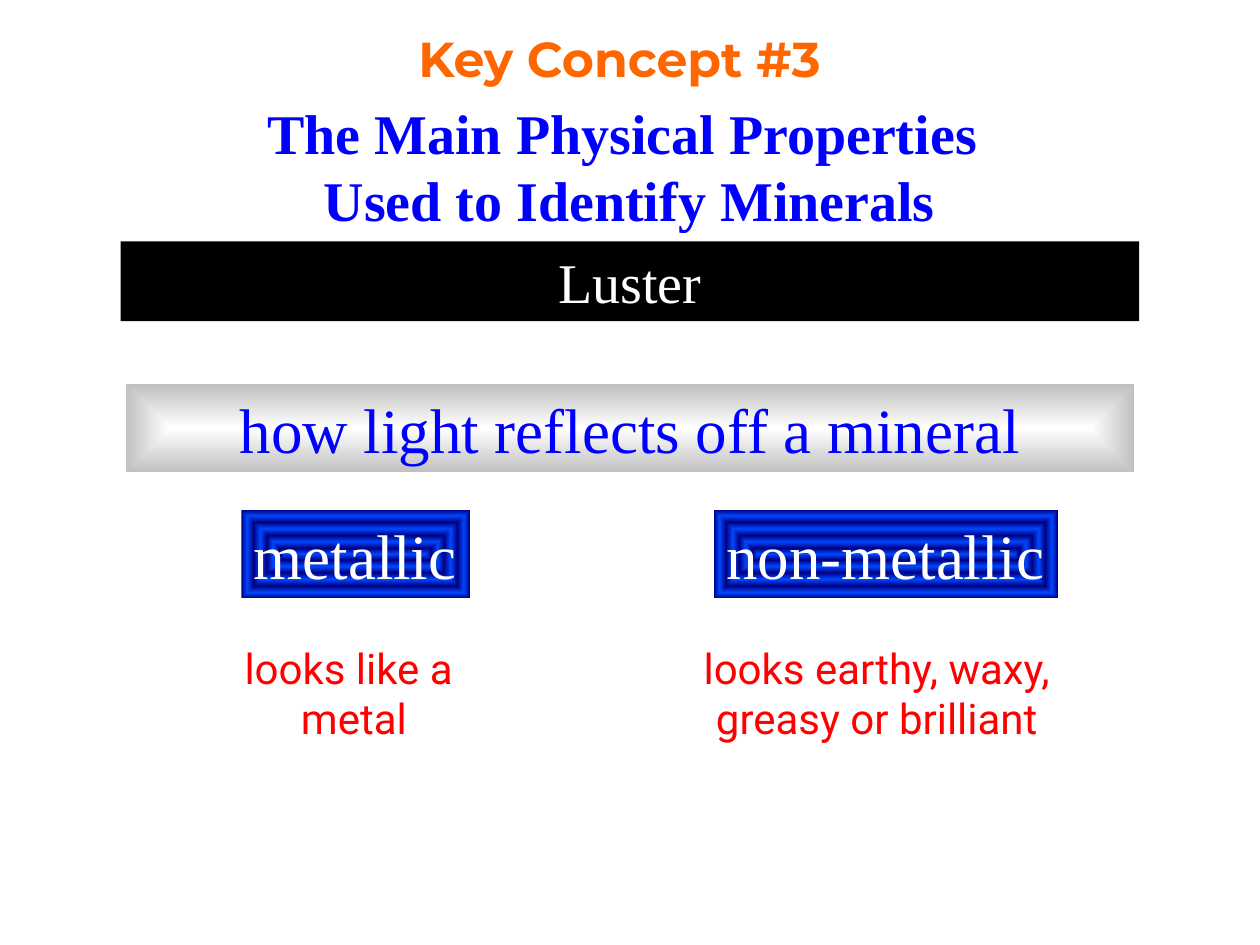
"""Build the slide on luster as a way to identify minerals."""
from lxml import etree
from pptx import Presentation
from pptx.dml.color import RGBColor
from pptx.enum.shapes import MSO_SHAPE
from pptx.enum.text import MSO_ANCHOR, MSO_AUTO_SIZE, PP_ALIGN
from pptx.oxml.ns import qn
from pptx.util import Pt

RECT = MSO_SHAPE.RECTANGLE
TOP, MIDDLE = MSO_ANCHOR.TOP, MSO_ANCHOR.MIDDLE
GROW, FIXED = MSO_AUTO_SIZE.SHAPE_TO_FIT_TEXT, MSO_AUTO_SIZE.NONE
LEFT, CENTER = PP_ALIGN.LEFT, PP_ALIGN.CENTER
SERIF = "Times New Roman"
HEX = {
    "orange": "FF6600", "blue": "0000FF", "black": "000000", "white": "FFFFFF",
    "red": "FF0000", "silver": "C0C0C0", "bright": "0047FF", "navy": "000082",
}
GLOW = [(0, "white"), (100, "silver")]
RINGS = list(zip((0, 13, 28, 42, 57, 72, 87, 100), ("bright", "navy") * 4))


def write(shape, lines, face, size, hue, bold=False, align=CENTER, wrap=True,
          anchor=TOP, fit=GROW):
    frame = shape.text_frame
    frame.text = "\n".join(lines)
    look = {"word_wrap": wrap, "vertical_anchor": anchor, "auto_size": fit}
    for key, value in look.items():
        setattr(frame, key, value)
    style = {"name": face, "size": Pt(size), "bold": bold}
    for para in frame.paragraphs:
        para.alignment = align
        for run in para.runs:
            for key, value in style.items():
                setattr(run.font, key, value)
            run.font.color.rgb = RGBColor.from_string(HEX[hue])


def shade(shape, stops):
    shape.fill.gradient()
    grad = shape.element.spPr.find(qn("a:gradFill"))
    for child in list(grad):
        grad.remove(child)
    group = etree.SubElement(grad, qn("a:gsLst"))
    for place, hue in stops:
        stop = etree.SubElement(group, qn("a:gs"), pos=str(place * 1000))
        etree.SubElement(stop, qn("a:srgbClr"), val=HEX[hue])
    way = etree.SubElement(grad, qn("a:path"), path="shape")
    half = dict.fromkeys("ltrb", "50000")
    etree.SubElement(way, qn("a:fillToRect"), half)


deck = Presentation()
deck.slide_width, deck.slide_height = Pt(720), Pt(540)
slide = deck.slides.add_slide(deck.slide_layouts[5])

title = slide.shapes.title
place = {"left": 174, "top": 12, "width": 360, "height": 42}
for key, value in place.items():
    setattr(title, key, Pt(value))
write(title, ["Key Concept #3"], "Montserrat", 28, "orange", bold=True,
      anchor=MIDDLE, fit=FIXED)

head = slide.shapes.add_textbox(Pt(145.5), Pt(52.5), Pt(428.5), Pt(84))
write(head, ["The Main Physical Properties ", "Used to Identify Minerals"],
      SERIF, 32, "blue", bold=True, wrap=False)

boxes = [
    ((69, 138, 582, 45.5), "black", ["Luster"], SERIF, 32, "white", CENTER, True),
    ((72, 219.5, 576, 50.5), GLOW, ["how light reflects off a mineral"],
     SERIF, 36, "blue", CENTER, True),
    ((138, 291.5, 130.5, 50.5), RINGS, ["metallic"],
     SERIF, 36, "white", LEFT, False),
    ((408, 291.5, 196.5, 50.5), RINGS, ["non-metallic"],
     SERIF, 36, "white", LEFT, False),
    ((126, 363.5, 152.5, 65), "white", ["looks like a ", "metal"],
     "Roboto", 24, "red", CENTER, False),
    ((378, 363.5, 252, 65), "white", ["looks earthy, waxy, ", "greasy or brilliant "],
     "Roboto", 24, "red", CENTER, True),
]
for spot, fill, lines, face, size, hue, align, wrap in boxes:
    box = slide.shapes.add_shape(RECT, *map(Pt, spot))
    box.shadow.inherit = False
    box.line.fill.background()
    if isinstance(fill, str):
        box.fill.solid()
        box.fill.fore_color.rgb = RGBColor.from_string(HEX[fill])
    else:
        shade(box, fill)
    write(box, lines, face, size, hue, align=align, wrap=wrap)

deck.save("out.pptx")
